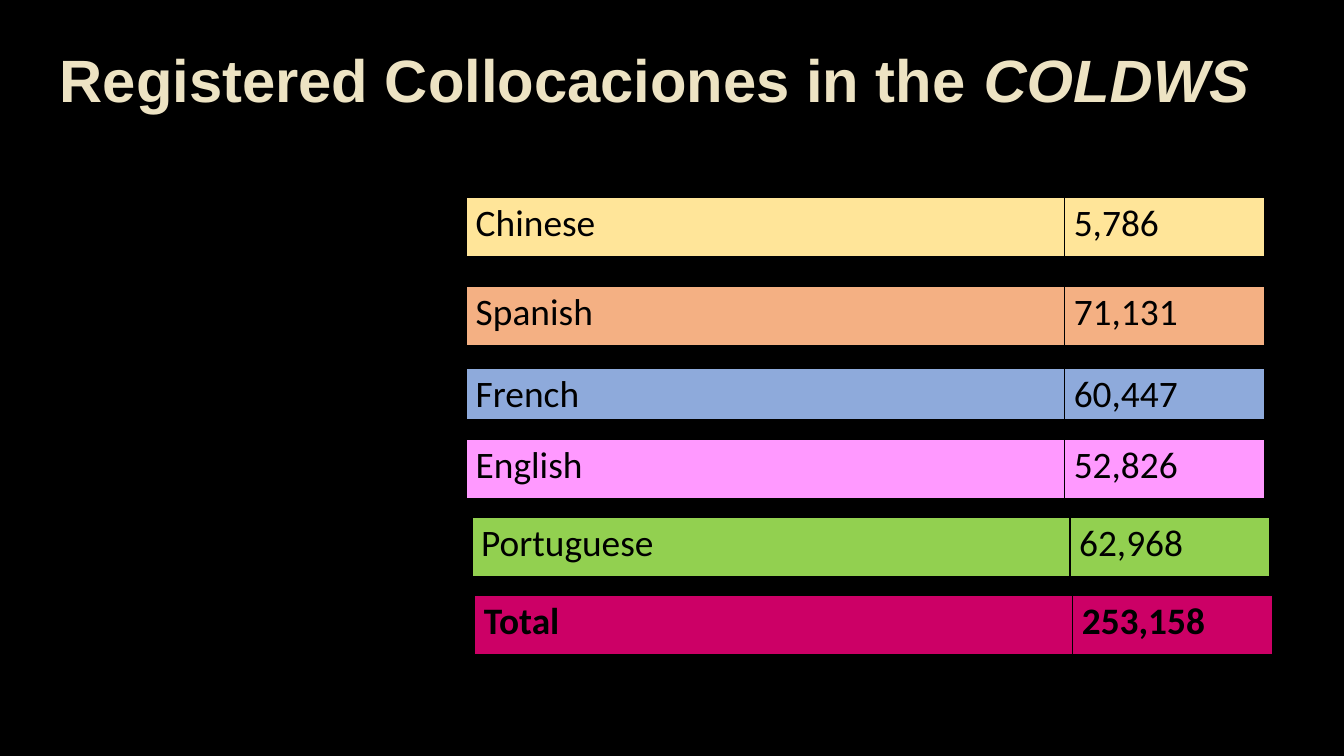
from lxml import etree
from pptx import Presentation
from pptx.dml.color import RGBColor
from pptx.enum.text import MSO_AUTO_SIZE, PP_ALIGN
from pptx.oxml.ns import qn
from pptx.util import Inches, Pt

CENTER = PP_ALIGN.CENTER
FIT_SHAPE = MSO_AUTO_SIZE.SHAPE_TO_FIT_TEXT

BLACK = RGBColor(0x00, 0x00, 0x00)
CREAM = RGBColor(0xED, 0xE3, 0xC3)
YELLOW = RGBColor(0xFF, 0xE5, 0x99)
ORANGE = RGBColor(0xF4, 0xB0, 0x83)
BLUE = RGBColor(0x8E, 0xAA, 0xDB)
PINK = RGBColor(0xFF, 0x99, 0xFF)
GREEN = RGBColor(0x92, 0xD0, 0x50)
CRIMSON = RGBColor(0xCC, 0x00, 0x66)

BAR_WIDTH = 5.94
COUNT_WIDTH = 1.49
BARS = [
    ("Chinese", "5,786", YELLOW, 3.47, 1.47, 0.44),
    ("Spanish", "71,131", ORANGE, 3.47, 2.13, 0.44),
    ("French", "60,447", BLUE, 3.47, 2.74, 0.38),
    ("English", "52,826", PINK, 3.47, 3.27, 0.44),
    ("Portuguese", "62,968", GREEN, 3.51, 3.85, 0.44),
    ("Total", "253,158", CRIMSON, 3.53, 4.43, 0.44),
]


def add_title(slide, left, top, width, height):
    """Place the centred title with the dictionary name in italics."""
    tf = slide.shapes.add_textbox(
        Inches(left), Inches(top), Inches(width), Inches(height)).text_frame
    tf.word_wrap = False
    tf.auto_size = FIT_SHAPE
    p = tf.paragraphs[0]
    p.alignment = CENTER
    for text, italic in (("Registered Collocaciones in the ", False), ("COLDWS", True)):
        r = p.add_run()
        r.text = text
        r.font.name = "Arial"
        r.font.size = Pt(32)
        r.font.bold = True
        r.font.italic = italic
        r.font.color.rgb = CREAM


def add_borders(cell):
    """Give a cell a thin black line on each side."""
    tc_pr = cell._tc.get_or_add_tcPr()
    for i, side in enumerate(("a:lnL", "a:lnR", "a:lnT", "a:lnB")):
        ln = etree.Element(qn(side), w=str(Pt(1)))
        fill = etree.SubElement(ln, qn("a:solidFill"))
        etree.SubElement(fill, qn("a:srgbClr"), val=str(BLACK))
        tc_pr.insert(i, ln)


def fill_cell(cell, text, color, bold):
    """Write one coloured cell."""
    cell.margin_left = cell.margin_right = Inches(0.07)
    cell.margin_top = cell.margin_bottom = 0
    cell.fill.solid()
    cell.fill.fore_color.rgb = color
    add_borders(cell)
    p = cell.text_frame.paragraphs[0]
    p.line_spacing = 1.07
    p.space_after = Pt(8)
    r = p.add_run()
    r.text = text
    r.font.name = "Calibri"
    r.font.size = Pt(20)
    r.font.bold = bold
    r.font.color.rgb = BLACK


def add_bar(slide, label, count, color, left, top, width, height):
    """Place a one-row table with a language and its count."""
    table = slide.shapes.add_table(
        1, 2, Inches(left), Inches(top), Inches(width), Inches(height)).table
    table.first_row = False
    table.horz_banding = False
    table.columns[0].width = Inches(width - COUNT_WIDTH)
    table.columns[1].width = Inches(COUNT_WIDTH)
    for i, text in enumerate((label, count)):
        fill_cell(table.cell(0, i), text, color, label == "Total")


def main():
    """Build and save the slide."""
    prs = Presentation()
    prs.slide_width = Inches(10)
    prs.slide_height = prs.slide_width * 9 // 16
    slide = prs.slides.add_slide(prs.slide_layouts[6])
    slide.background.fill.solid()
    slide.background.fill.fore_color.rgb = BLACK
    add_title(slide, 0.31, 0.27, 9.12, 0.64)
    for label, count, color, left, top, height in BARS:
        add_bar(slide, label, count, color, left, top, BAR_WIDTH, height)
    prs.save("out.pptx")


if __name__ == "__main__":
    main()
